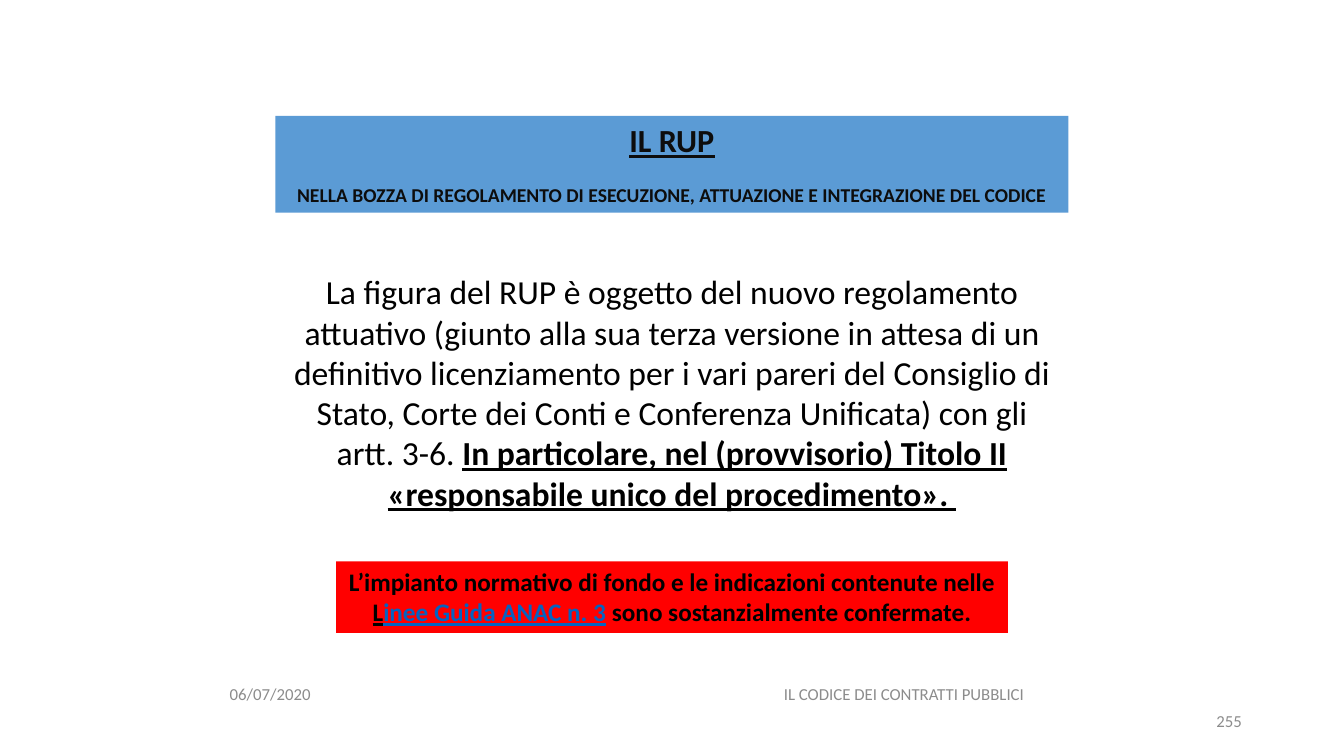
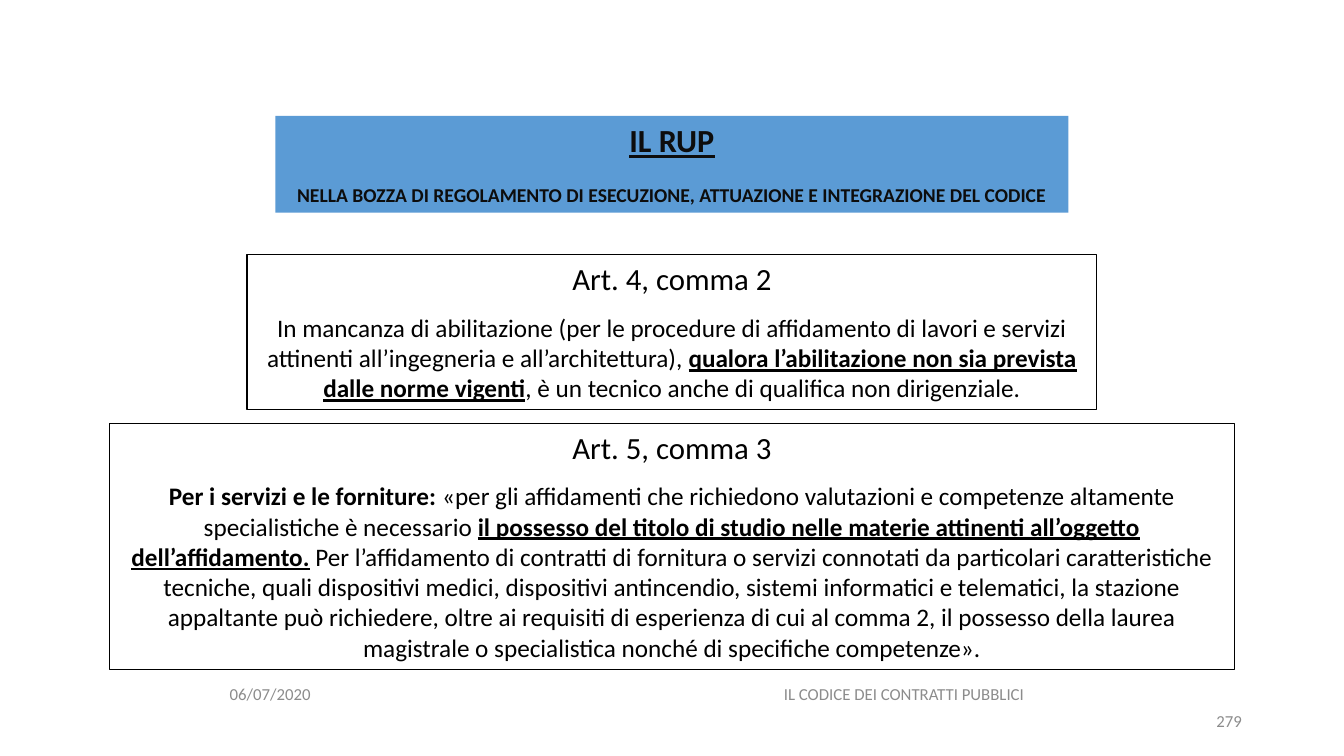
from pptx import Presentation
from pptx.dml.color import RGBColor
from pptx.enum.shapes import MSO_SHAPE
from pptx.enum.text import MSO_ANCHOR, MSO_AUTO_SIZE, PP_ALIGN
from pptx.util import Inches, Pt

RECTANGLE = MSO_SHAPE.RECTANGLE
TOP, MIDDLE = MSO_ANCHOR.TOP, MSO_ANCHOR.MIDDLE
LEFT, CENTER, RIGHT = PP_ALIGN.LEFT, PP_ALIGN.CENTER, PP_ALIGN.RIGHT
GROW = MSO_AUTO_SIZE.SHAPE_TO_FIT_TEXT

COLORS = {
    "band": "5B9BD5",
    "alert": "FF0000",
    "text": "000000",
    "title": "0D0D0D",
    "footer": "8C8C8C",
    "link": "0563C1",
}
FONT = "Calibri"
GRID = 100
BAND_WIDTH = 59
PLAIN, BOLD, UNDERLINED, LINK = "plain", "bold", "underlined", "link"


class Deck:
    """Holds the style and the current slide, on a grid of 100 columns by 100 rows."""

    def __init__(self):
        self.presentation = Presentation()
        self.presentation.slide_width = Inches(13.33)
        self.presentation.slide_height = Inches(7.5)
        self.column = self.presentation.slide_width / GRID
        self.row = self.presentation.slide_height / GRID
        self.slide = None

    def color(self, name):
        return RGBColor.from_string(COLORS[name])

    def box(self, left, top, width, height):
        return (round(left * self.column), round(top * self.row),
                round(width * self.column), round(height * self.row))

    def paragraph(self, paragraph, runs, size, color="text", align=CENTER, before=0):
        paragraph.alignment = align
        paragraph.space_before = Pt(before)
        paragraph.font.name = FONT
        paragraph.font.size = Pt(size)
        paragraph.font.color.rgb = self.color(color)
        for text, style in runs:
            run = paragraph.add_run()
            run.text = text
            if style != PLAIN:
                run.font.bold = True
            if style in (UNDERLINED, LINK):
                run.font.underline = True
            if style == LINK:
                run.font.color.rgb = self.color("link")

    def frame(self, shape, anchor=TOP):
        frame = shape.text_frame
        frame.word_wrap = True
        frame.vertical_anchor = anchor
        return frame

    def text(self, left, top, width, height, runs, size, color="text",
             align=CENTER, anchor=TOP):
        shape = self.slide.shapes.add_textbox(*self.box(left, top, width, height))
        frame = self.frame(shape, anchor)
        self.paragraph(frame.paragraphs[0], runs, size, color, align)

    def panel(self, top, width, height, fill=None):
        left = (GRID - width) / 2
        shape = self.slide.shapes.add_shape(RECTANGLE, *self.box(left, top, width, height))
        shape.shadow.inherit = False
        if fill:
            shape.fill.solid()
            shape.fill.fore_color.rgb = self.color(fill)
            shape.line.fill.background()
        else:
            shape.fill.background()
            shape.line.color.rgb = self.color("text")
            shape.line.width = Pt(0.75)
        frame = self.frame(shape)
        frame.auto_size = GROW
        return frame

    def footer(self, number):
        for left, top, width, align, words in (
            (16.35, 89.07, 18.75, LEFT, "06/07/2020"),
            (53.55, 89.07, 27.45, CENTER, "IL CODICE DEI CONTRATTI PUBBLICI"),
            (70.65, 92.67, 22.5, RIGHT, str(number)),
        ):
            self.text(left, top, width, 5.33, [(words, PLAIN)], 12, "footer", align, MIDDLE)

    def title(self):
        frame = self.panel(15.33, BAND_WIDTH, 12.8, "band")
        self.paragraph(frame.paragraphs[0], [("IL RUP", UNDERLINED)], 23, "title")
        subtitle = ("NELLA BOZZA DI REGOLAMENTO DI ESECUZIONE, "
                    "ATTUAZIONE E INTEGRAZIONE DEL CODICE")
        self.paragraph(frame.add_paragraph(), [(subtitle, BOLD)], 14, "title", before=17)

    def add_slide(self, number):
        self.slide = self.presentation.slides.add_slide(self.presentation.slide_layouts[6])
        self.footer(number)
        self.title()

    def body(self, top, height, runs):
        self.text((GRID - BAND_WIDTH) / 2, top, BAND_WIDTH, height, runs, 24)

    def alert(self, top, width, height, runs):
        frame = self.panel(top, width, height, "alert")
        self.paragraph(frame.paragraphs[0], runs, 18)

    def article(self, top, width, height, heading, runs):
        frame = self.panel(top, width, height)
        self.paragraph(frame.paragraphs[0], [(heading, PLAIN)], 22)
        self.paragraph(frame.add_paragraph(), runs, 18, before=11)


def main():
    deck = Deck()

    deck.add_slide(255)
    deck.body(35.2, 33.6, [
        ("La figura del RUP è oggetto del nuovo regolamento attuativo (giunto alla sua "
         "terza versione in attesa di un definitivo licenziamento per i vari pareri del "
         "Consiglio di Stato, Corte dei Conti e Conferenza Unificata) con gli artt. 3-6. ",
         PLAIN),
        ("In particolare, nel (provvisorio) Titolo II «responsabile unico del "
         "procedimento». ", UNDERLINED),
    ])
    deck.alert(74.27, 50, 9.47, [
        ("L’impianto normativo di fondo e le indicazioni contenute nelle ", BOLD),
        ("L", UNDERLINED),
        ("inee Guida ANAC n. 3", LINK),
        (" sono sostanzialmente confermate.", BOLD),
    ])

    deck.add_slide(279)
    deck.article(33.73, 63.24, 20.4, "Art. 4, comma 2", [
        ("In mancanza di abilitazione (per le procedure di affidamento di lavori e servizi "
         "attinenti all’ingegneria e all’architettura), ", PLAIN),
        ("qualora l’abilitazione non sia prevista dalle norme vigenti", UNDERLINED),
        (", è un tecnico anche di qualifica non dirigenziale.", PLAIN),
    ])
    deck.article(56, 83.72, 32.53, "Art. 5, comma 3", [
        ("Per i servizi e le forniture: ", BOLD),
        ("«per gli affidamenti che richiedono valutazioni e competenze altamente "
         "specialistiche è necessario ", PLAIN),
        ("il possesso del titolo di studio nelle materie attinenti all’oggetto "
         "dell’affidamento.", UNDERLINED),
        (" Per l’affidamento di contratti di fornitura o servizi connotati da particolari "
         "caratteristiche tecniche, quali dispositivi medici, dispositivi antincendio, "
         "sistemi informatici e telematici, la stazione appaltante può richiedere, oltre "
         "ai requisiti di esperienza di cui al comma 2, il possesso della laurea "
         "magistrale o specialistica nonché di specifiche competenze».", PLAIN),
    ])

    deck.presentation.save("out.pptx")


if __name__ == "__main__":
    main()
